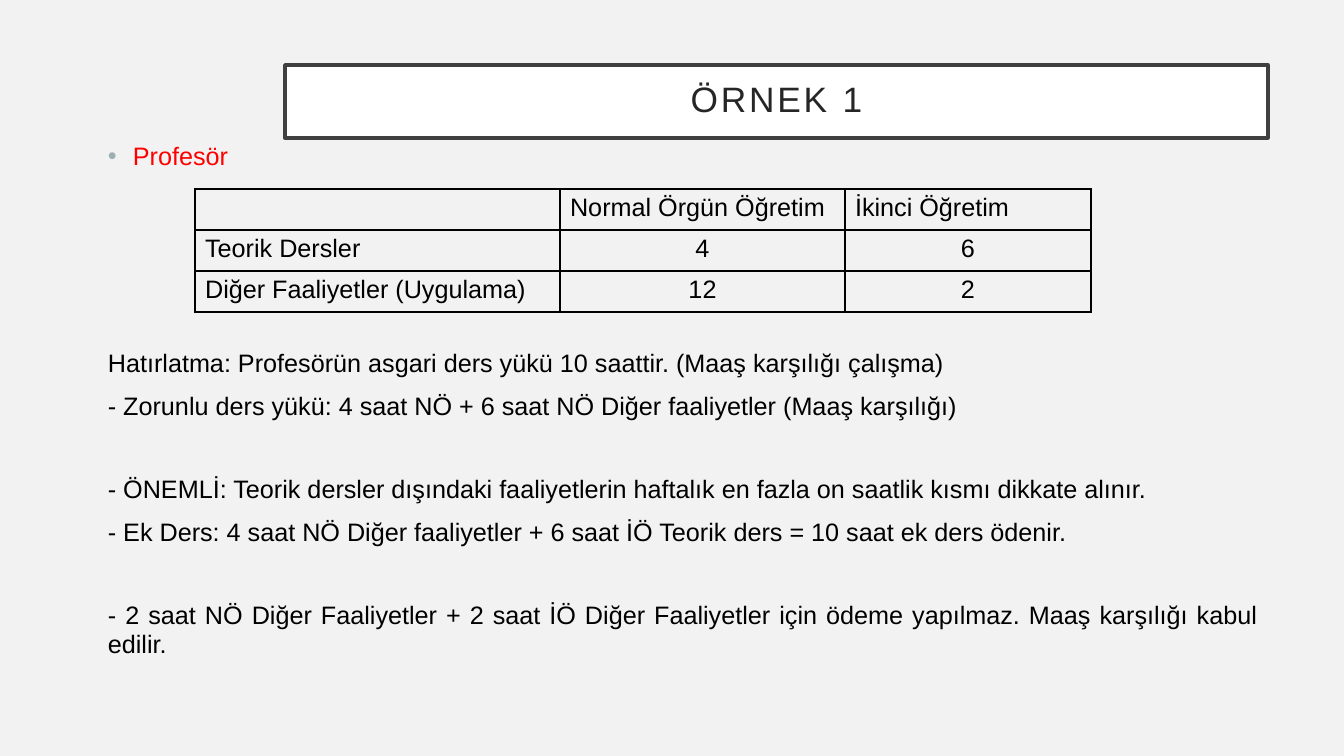
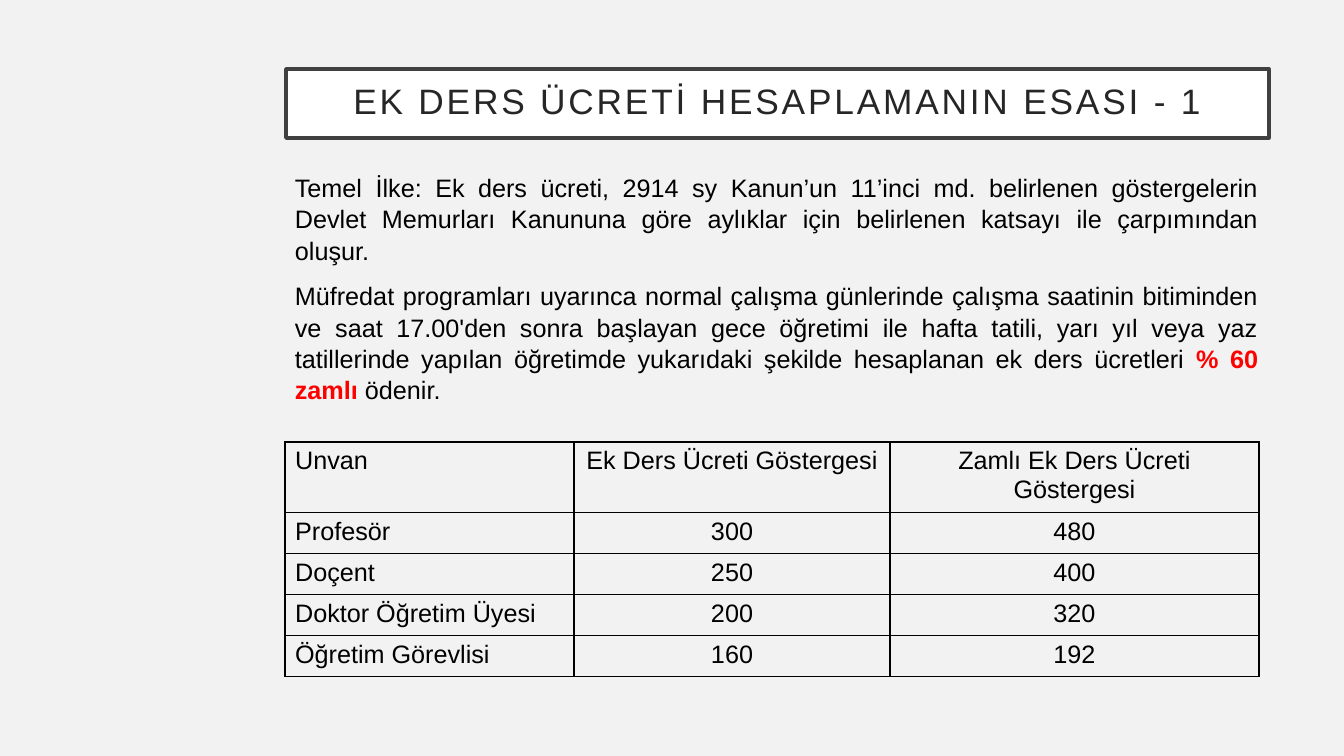
from lxml.etree import SubElement as Sub
from pptx import Presentation
from pptx.dml.color import RGBColor as RGB
from pptx.enum.shapes import MSO_SHAPE as Shape
from pptx.enum.text import MSO_ANCHOR as Anchor, PP_ALIGN as Align
from pptx.oxml.ns import qn
from pptx.util import Pt

PAPER = RGB(0xF2, 0xF2, 0xF2)
WHITE = RGB(0xFF, 0xFF, 0xFF)
BLACK = RGB(0, 0, 0)
INK = RGB(0x26, 0x26, 0x26)
FRAME = RGB(0x40, 0x40, 0x40)
RED = RGB(0xFF, 0, 0)
DOT = RGB(0x9B, 0xAF, 0xB5)

FONT = "Arial"
SCALE = 914400 / 100.8
GAP = 10      # points before a paragraph
SKIP = 29.4   # points added for each line left open


def px(n):
    return round(n * SCALE)


def solid(parent, color):
    fill = Sub(parent, qn("a:solidFill"))
    Sub(fill, qn("a:srgbClr"), val=str(color))


def write(par, text, size=18, color=BLACK, bold=False, align=Align.LEFT,
          line=None, before=None, track=None):
    """Add one run to a paragraph and set the paragraph's format."""
    par.alignment = align
    if line:
        par.line_spacing = line
    if before is not None:
        par.space_before = Pt(before)
    run = par.add_run()
    run.text = text
    font = run.font
    font.name, font.size, font.bold = FONT, Pt(size), bold
    font.color.rgb = color
    if track:
        run._r.get_or_add_rPr().set("spc", str(track * 100))


def bullet(par, indent=25):
    """Call after the spacing is set, as the bullet must follow it."""
    props = par._p.get_or_add_pPr()
    props.set("marL", str(px(indent)))
    props.set("indent", str(-px(indent)))
    color = Sub(props, qn("a:buClr"))
    Sub(color, qn("a:srgbClr"), val=str(DOT))
    Sub(props, qn("a:buFont"), typeface=FONT)
    Sub(props, qn("a:buChar"), char="•")


def border(cell):
    props = cell._tc.get_or_add_tcPr()
    for side in "LRTB":
        edge = Sub(props, qn(f"a:ln{side}"), w=str(Pt(1)))
        solid(edge, BLACK)


class Deck:
    def __init__(self):
        self.prs = Presentation()
        self.prs.slide_width, self.prs.slide_height = px(1344), px(756)
        fill = self.prs.slide_master.background.fill
        fill.solid()
        fill.fore_color.rgb = PAPER

    def slide(self, title, *box):
        blank = self.prs.slide_layouts[6]
        self.shapes = self.prs.slides.add_slide(blank).shapes
        self.title(title, *box)

    def title(self, text, *box):
        rect = self.shapes.add_shape(Shape.RECTANGLE, *map(px, box))
        rect.shadow.inherit = False
        rect.fill.solid()
        rect.fill.fore_color.rgb = WHITE
        rect.line.color.rgb = FRAME
        rect.line.width = Pt(2.5)
        frame = rect.text_frame
        frame.word_wrap = True
        frame.vertical_anchor = Anchor.MIDDLE
        frame.margin_left = frame.margin_right = px(20)
        frame.margin_top = frame.margin_bottom = px(20)
        write(frame.paragraphs[0], text, size=25.2, color=INK,
              align=Align.CENTER, line=0.9, track=2)

    def body(self, items, *box, line):
        """Each item is (open lines before it, runs, bulleted)."""
        frame = self.shapes.add_textbox(*map(px, box)).text_frame
        frame.word_wrap = True
        for i, (skip, runs, dot) in enumerate(items):
            par = frame.add_paragraph() if i else frame.paragraphs[0]
            for text, style in runs:
                write(par, text, align=Align.JUSTIFY, line=line,
                      before=GAP + skip * SKIP, **style)
            if dot:
                bullet(par)

    def table(self, rows, left, top, cols, heights, centred):
        """Centre the cells for which centred(row, col) holds."""
        grid = self.shapes.add_table(
            len(rows), len(cols), px(left), px(top),
            px(sum(cols)), px(sum(heights))).table
        grid.first_row = grid.horz_banding = False
        for col, width in zip(grid.columns, cols):
            col.width = px(width)
        for r, (row, high) in enumerate(zip(rows, heights)):
            grid.rows[r].height = px(high)
            for c, text in enumerate(row):
                cell = grid.cell(r, c)
                border(cell)
                cell.fill.background()
                align = Align.CENTER if centred(r, c) else Align.LEFT
                if text:
                    write(cell.text_frame.paragraphs[0], text, align=align)


def plain(text, skip=0):
    return skip, [(text, {})], False


def example(deck):
    deck.slide("ÖRNEK 1", 285, 65, 983, 73)
    deck.body([
        (0, [("Profesör", {"color": RED})], True),
        plain("Hatırlatma: Profesörün asgari ders yükü 10 saattir. "
              "(Maaş karşılığı çalışma)", skip=4),
        plain("- Zorunlu ders yükü: 4 saat NÖ + 6 saat NÖ Diğer faaliyetler "
              "(Maaş karşılığı)"),
        plain("- ÖNEMLİ: Teorik dersler dışındaki faaliyetlerin haftalık "
              "en fazla on saatlik kısmı dikkate alınır.", skip=1),
        plain("- Ek Ders: 4 saat NÖ Diğer faaliyetler + 6 saat İÖ Teorik "
              "ders = 10 saat ek ders ödenir."),
        plain("- 2 saat NÖ Diğer Faaliyetler + 2 saat İÖ Diğer Faaliyetler "
              "için ödeme yapılmaz. Maaş karşılığı kabul edilir.", skip=1),
    ], 98, 138, 1170, 543, line=0.94)
    deck.table([
        ("", "Normal Örgün Öğretim", "İkinci Öğretim"),
        ("Teorik Dersler", "4", "6"),
        ("Diğer Faaliyetler (Uygulama)", "12", "2"),
    ], 195, 189, (365, 285, 246), [41] * 3, lambda r, c: r and c)


def basis(deck):
    deck.slide("EK DERS ÜCRETİ HESAPLAMANIN ESASI - 1", 286, 69, 983, 69)
    deck.body([
        plain("Temel İlke: Ek ders ücreti, 2914 sy Kanun’un 11’inci md. "
              "belirlenen göstergelerin Devlet Memurları Kanununa göre "
              "aylıklar için belirlenen katsayı ile çarpımından oluşur."),
        (0, [("Müfredat programları uyarınca normal çalışma günlerinde "
              "çalışma saatinin bitiminden ve saat 17.00'den sonra başlayan "
              "gece öğretimi ile hafta tatili, yarı yıl veya yaz tatillerinde "
              "yapılan öğretimde yukarıdaki şekilde hesaplanan ek ders "
              "ücretleri ", {}),
             ("% 60 zamlı ", {"color": RED, "bold": True}),
             ("ödenir.", {})], False),
    ], 285, 166, 983, 249, line=1.04)
    deck.table([
        ("Unvan", "Ek Ders Ücreti Göstergesi",
         "Zamlı Ek Ders Ücreti Göstergesi"),
        ("Profesör", "300", "480"),
        ("Doçent", "250", "400"),
        ("Doktor Öğretim Üyesi", "200", "320"),
        ("Öğretim Görevlisi", "160", "192"),
    ], 285, 442, (289, 316, 369), [66] + [41] * 4, lambda r, c: c)


def main():
    deck = Deck()
    example(deck)
    basis(deck)
    deck.prs.save("out.pptx")


if __name__ == "__main__":
    main()
